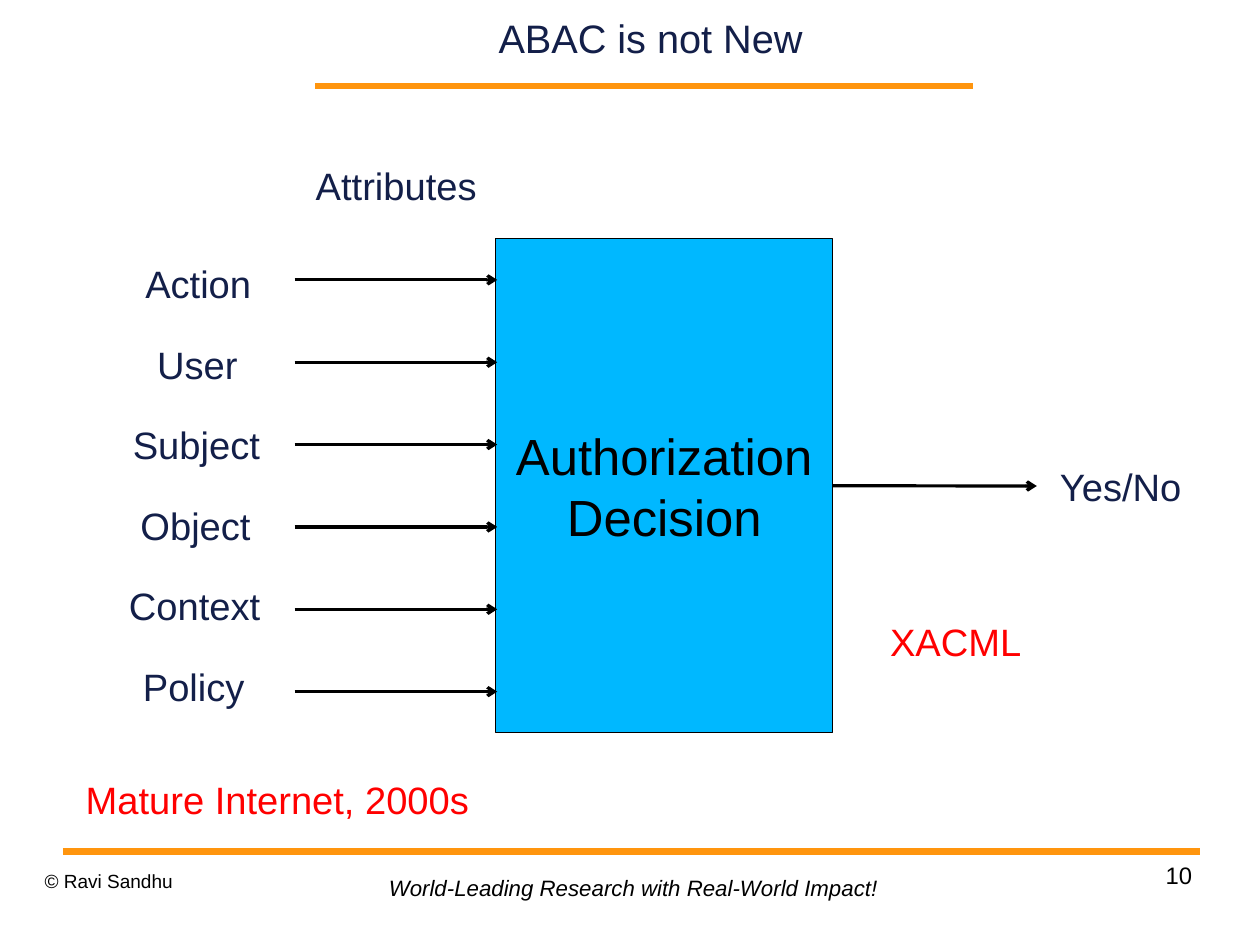
import pptx
import pptx.util
import pptx.dml.color
import pptx.enum.shapes
import pptx.enum.text
import pptx.oxml
import pptx.oxml.ns

Cm = pptx.util.Cm
Pt = pptx.util.Pt
RGBColor = pptx.dml.color.RGBColor
ALIGN = pptx.enum.text.PP_ALIGN
MIDDLE = pptx.enum.text.MSO_ANCHOR.MIDDLE

NAVY = RGBColor(0x13, 0x1F, 0x49)
ORANGE = RGBColor(0xFF, 0x95, 0x0E)
BLUE = RGBColor(0x00, 0xB8, 0xFF)
RED = RGBColor(0xFF, 0x00, 0x00)
BLACK = RGBColor(0x00, 0x00, 0x00)

ATTRIBUTES = ["Action", "User", "Subject", "Object", "Context", "Policy"]


def set_text(s, text, size, color, align, inset=(0.25, 0.13), italic=False):
    tf = s.text_frame
    tf.word_wrap = True
    tf.margin_left = tf.margin_right = Cm(inset[0])
    tf.margin_top = tf.margin_bottom = Cm(inset[1])
    tf.text = text
    p = tf.paragraphs[0]
    p.alignment = align
    font = p.runs[0].font
    font.name = "Arial"
    font.size = Pt(size)
    font.italic = italic
    font.color.rgb = color


def add_title(sp, text):
    s = sp.title
    s.left, s.top, s.width, s.height = Cm(7.24), Cm(0.13), Cm(14.43), Cm(1.42)
    set_text(s, text, 25, NAVY, ALIGN.CENTER, (0, 0))
    s.text_frame.auto_size = pptx.enum.text.MSO_AUTO_SIZE.NONE
    s.text_frame.vertical_anchor = MIDDLE


def add_label(sp, text, left, top, width, height=1.27, size=24, color=NAVY,
              align=ALIGN.CENTER, **style):
    s = sp.add_textbox(Cm(left), Cm(top), Cm(width), Cm(height))
    set_text(s, text, size, color, align, **style)


def add_line(sp, x1, x2, y, color, width):
    s = sp.add_connector(pptx.enum.shapes.MSO_CONNECTOR.STRAIGHT,
                         Cm(x1), Cm(y), Cm(x2), Cm(y))
    s.line.color.rgb = color
    s.line.width = Pt(width)
    pptx.oxml.ns.qn("a:effectLst")
    s._element.spPr.append(pptx.oxml.parse_xml(
        "<a:effectLst %s/>" % pptx.oxml.ns.nsdecls("a")))
    return s


def add_arrow(sp, x1, x2, y):
    s = add_line(sp, x1, x2, y, BLACK, 2)
    s.line._get_or_add_ln().append(pptx.oxml.parse_xml(
        '<a:tailEnd %s type="arrow"/>' % pptx.oxml.ns.nsdecls("a")))
    return s


def add_decision_box(sp, text):
    s = sp.add_shape(pptx.enum.shapes.MSO_SHAPE.RECTANGLE,
                     Cm(11.02), Cm(5.31), Cm(7.49), Cm(10.97))
    s.shadow.inherit = False
    s.fill.solid()
    s.fill.fore_color.rgb = BLUE
    s.line.color.rgb = BLACK
    s.line.width = Pt(0.75)
    set_text(s, text, 32, BLACK, ALIGN.CENTER)
    s.text_frame.vertical_anchor = MIDDLE
    return s


def main():
    prs = pptx.Presentation()
    prs.slide_width, prs.slide_height = Cm(28), Cm(21)
    sp = prs.slides.add_slide(prs.slide_layouts[5]).shapes

    # Title and rules
    add_title(sp, "ABAC is not New")
    add_line(sp, 7.01, 21.62, 1.91, ORANGE, 4.31)
    add_line(sp, 1.4, 26.67, 18.92, ORANGE, 4.31)

    # Footer
    add_label(sp, "© Ravi Sandhu", 0.99, 19.33, 6.53, 1.09, 12, BLACK,
              ALIGN.LEFT, inset=(0, 0))
    add_label(sp, "World-Leading Research with Real-World Impact!",
              8.41, 19.33, 11.63, 0.84, 14, BLACK, ALIGN.LEFT,
              inset=(0.23, 0.1), italic=True)
    add_label(sp, "10", 19.96, 19.13, 6.53, 1.45, 15, BLACK, ALIGN.RIGHT,
              inset=(0, 0))

    # Attributes feeding the decision
    box = add_decision_box(sp, "Authorization Decision")
    add_label(sp, "Attributes", 6.76, 3.48, 4.09)
    for i, name in enumerate(ATTRIBUTES):
        add_label(sp, name, 2.64 - 0.02 * i, 5.66 + 1.79 * i, 3.53)
        add_arrow(sp, 6.55, 11.05, 6.22 + 1.83 * i)

    # Result
    result = add_arrow(sp, 18.51, 23.04, 10.8)
    result.begin_connect(box, 3)
    add_label(sp, "Yes/No", 23.14, 10.16, 3.53)

    # Remarks
    add_label(sp, "Mature Internet, 2000s", 0.69, 17.12, 10.95, color=RED)
    add_label(sp, "XACML", 19.53, 13.61, 7.29, color=RED, align=ALIGN.LEFT)

    prs.save("out.pptx")


if __name__ == "__main__":
    main()
